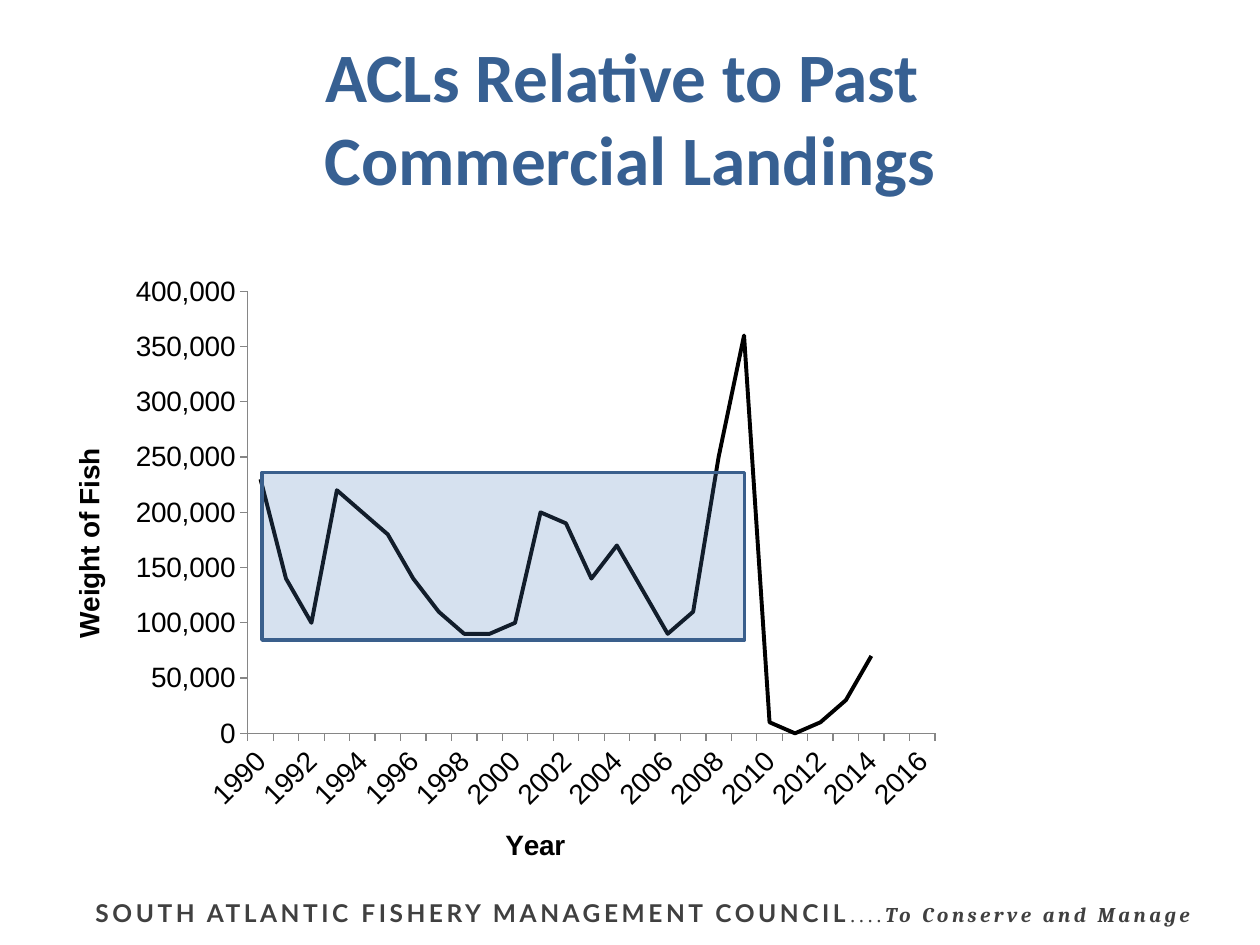
from dataclasses import dataclass

from lxml import etree
from pptx import Presentation
from pptx.chart.data import CategoryChartData
from pptx.dml.color import RGBColor
from pptx.enum.chart import XL_CHART_TYPE, XL_MARKER_STYLE, XL_TICK_MARK
from pptx.enum.shapes import MSO_SHAPE
from pptx.enum.text import MSO_ANCHOR, PP_ALIGN
from pptx.oxml.ns import qn
from pptx.util import Inches, Pt

LINE = XL_CHART_TYPE.LINE
NO_MARKER = XL_MARKER_STYLE.NONE
OUTSIDE = XL_TICK_MARK.OUTSIDE
RECTANGLE = MSO_SHAPE.RECTANGLE
MIDDLE = MSO_ANCHOR.MIDDLE
CENTER = PP_ALIGN.CENTER


@dataclass(frozen=True)
class Theme:
    title: str = "376092"
    footer: str = "404040"
    ink: str = "000000"
    axis: str = "868686"
    band_fill: str = "4F81BD"
    band_line: str = "3A5F8C"
    title_size: float = 39.6
    chart_size: float = 16
    footer_size: float = 14
    tagline_size: float = 12


THEME = Theme()
FIRST_YEAR, LAST_YEAR = 1990, 2016
LANDINGS = [230000, 140000, 100000, 220000, 200000, 180000, 140000, 110000,
            90000, 90000, 100000, 200000, 190000, 140000, 170000, 130000,
            90000, 110000, 250000, 360000, 10000, 0, 10000, 30000, 70000]
PLOT = {"x": 0.163, "y": 0.04, "w": 0.606, "h": 0.731}


def rgb(value):
    return RGBColor.from_string(value)


def style_font(font, color, **values):
    for name, value in values.items():
        setattr(font, name, value)
    font.color.rgb = rgb(color)


def add_text_box(s, box):
    tf = s.shapes.add_textbox(*map(Inches, box)).text_frame
    tf.word_wrap = True
    return tf


def add_title(s, box, lines):
    tf = add_text_box(s, box)
    tf.vertical_anchor = MIDDLE
    p = tf.paragraphs[0]
    p.alignment = CENTER
    for i, line in enumerate(lines):
        if i:
            p.add_line_break()
        r = p.add_run()
        r.text = line
        style_font(r.font, THEME.title, name="Calibri", bold=True,
                   size=Pt(THEME.title_size))


def add_footer(s, box):
    p = add_text_box(s, box).paragraphs[0]
    small = Pt(THEME.tagline_size)
    parts = [
        ("SOUTH ATLANTIC FISHERY MANAGEMENT COUNCIL",
         {"name": "Lato", "size": Pt(THEME.footer_size), "bold": True}),
        ("....", {"name": "Times New Roman", "size": small}),
        ("To Conserve and Manage",
         {"name": "Cambria", "size": small, "bold": True, "italic": True}),
    ]
    for text, values in parts:
        r = p.add_run()
        r.text = text
        style_font(r.font, THEME.footer, **values)
        r.font._element.set("spc", "200")


def set_plot_layout(chart):
    """Fix the inner plot area as shares of the chart's size."""
    area = chart._chartSpace.chart.plotArea
    for old in area.findall(qn("c:layout")):
        area.remove(old)
    layout = etree.Element(qn("c:layout"))
    area.insert(0, layout)
    manual = etree.SubElement(layout, qn("c:manualLayout"))
    settings = {"layoutTarget": "inner", "xMode": "edge", "yMode": "edge", **PLOT}
    for tag, value in settings.items():
        etree.SubElement(manual, qn(f"c:{tag}")).set("val", str(value))


def format_axis(axis, title):
    axis.has_major_gridlines = False
    axis.major_tick_mark = OUTSIDE
    axis.format.line.color.rgb = rgb(THEME.axis)
    axis.format.line.width = Pt(0.75)
    tf = axis.axis_title.text_frame
    tf.text = title
    style_font(tf.paragraphs[0].runs[0].font, THEME.ink, name="Arial",
               bold=True, size=Pt(THEME.chart_size))
    return tf


def add_landings_chart(s, box):
    data = CategoryChartData(number_format="#,##0")
    data.categories = [str(year) for year in range(FIRST_YEAR, LAST_YEAR + 1)]
    unreported = len(data.categories) - len(LANDINGS)
    data.add_series("Series 1", LANDINGS + [None] * unreported)
    chart = s.shapes.add_chart(LINE, *map(Inches, box), data).chart
    chart.has_legend = chart.has_title = False
    style_font(chart.font, THEME.ink, name="Arial", size=Pt(THEME.chart_size))
    chart.plots[0].vary_by_categories = False
    set_plot_layout(chart)

    series = chart.plots[0].series[0]
    series.smooth = False
    series.marker.style = NO_MARKER
    series.format.line.color.rgb = rgb(THEME.ink)
    series.format.line.width = Pt(2.25)

    years, weights = chart.category_axis, chart.value_axis
    format_axis(years, "Year")
    years.tick_labels.font.size = Pt(THEME.chart_size)
    body = years._element.find(qn("c:txPr")).find(qn("a:bodyPr"))
    body.set("rot", "-2700000")
    skip = etree.Element(qn("c:tickLblSkip"))
    skip.set("val", "2")
    years._element.find(qn("c:noMultiLvlLbl")).addprevious(skip)

    tf = format_axis(weights, "Weight of Fish")
    body = tf._txBody.bodyPr
    body.set("rot", "-5400000")
    body.set("vert", "horz")
    weights.minimum_scale, weights.maximum_scale = 0, 400000
    weights.major_unit = 50000
    weights.tick_labels.number_format = "#,##0"
    weights.tick_labels.number_format_is_linked = False


def add_reference_band(s, box):
    """Shade the range of past landings with a see-through box."""
    sp = s.shapes.add_shape(RECTANGLE, *map(Inches, box))
    sp.shadow.inherit = False
    sp.fill.solid()
    sp.fill.fore_color.rgb = rgb(THEME.band_fill)
    color = sp.fill._xPr.find(qn("a:solidFill"))[0]
    etree.SubElement(color, qn("a:alpha")).set("val", "23000")
    sp.line.color.rgb = rgb(THEME.band_line)
    sp.line.width = Pt(2)


def main():
    prs = Presentation()
    prs.slide_width, prs.slide_height = Inches(10), Inches(7.5)
    s = prs.slides.add_slide(prs.slide_layouts[6])
    add_footer(s, (0.66, 7.08, 9.34, 0.34))
    add_title(s, (0.5, 0.3, 9, 1.25),
              ["ACLs Relative to Past ", "Commercial Landings"])
    add_landings_chart(s, (0.5, 2.12, 9, 4.8))
    add_reference_band(s, (2.08, 3.75, 3.83, 1.33))
    prs.save("out.pptx")


if __name__ == "__main__":
    main()
